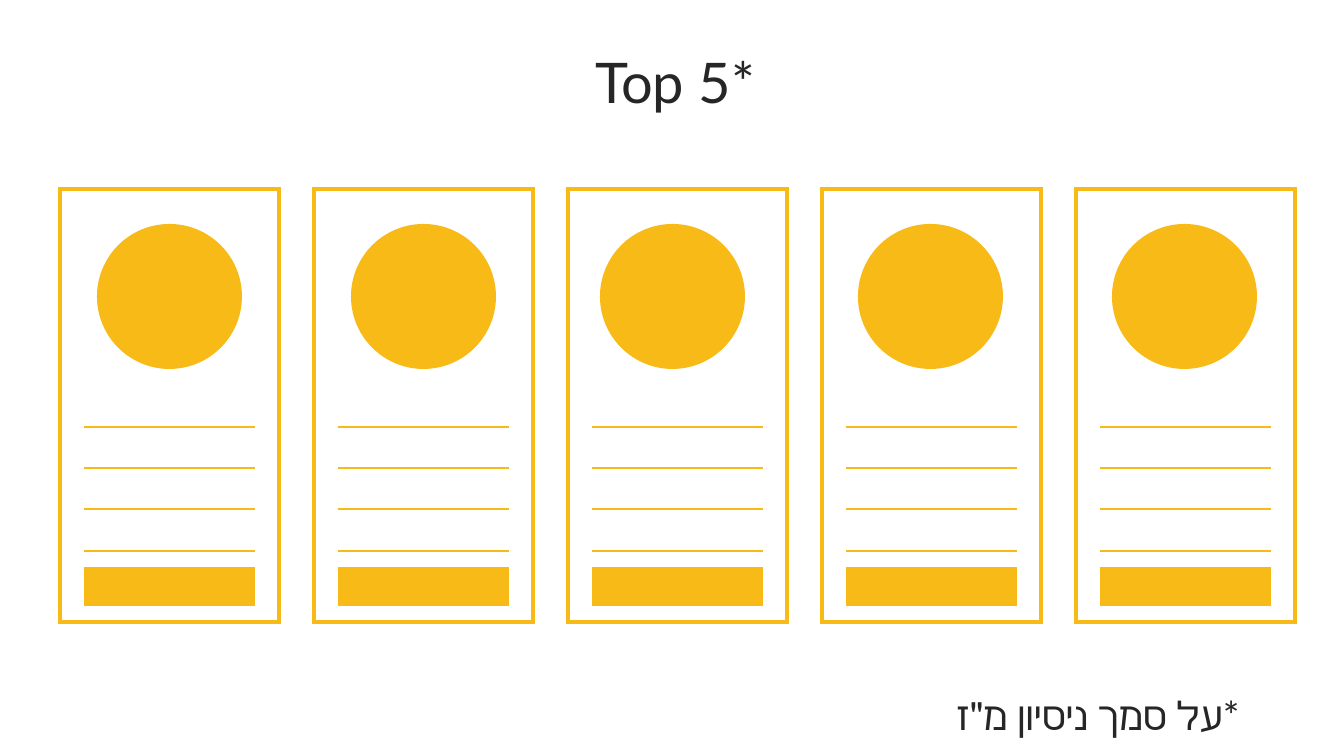
from dataclasses import dataclass

from lxml.etree import SubElement
from pptx import Presentation
from pptx.dml.color import RGBColor
from pptx.enum.lang import MSO_LANGUAGE_ID
from pptx.enum.shapes import MSO_SHAPE
from pptx.enum.text import MSO_ANCHOR, PP_ALIGN
from pptx.oxml.ns import qn
from pptx.slide import Slide
from pptx.table import _Cell
from pptx.util import Emu, Pt

AMBER = RGBColor(0xF8, 0xBA, 0x16)
INK = RGBColor(0x26, 0x26, 0x26)
FONT = "Lato"

COLUMNS = (24, 171, 24)
ROWS = (197, 41, 41, 41, 42, 16, 39, 16)
CARD_TOP = 189
CARD_LEFT = 60
CARD_PITCH = 254
CIRCLE_TOP = 224
CIRCLE_SIZE = 145
FRAME_PT = 3
RULE_PT = 1.5
BUTTON_ROW = 6


@dataclass(frozen=True)
class Card:
    left: int
    circle_inset: int


@dataclass(frozen=True)
class Label:
    text: str
    left: int
    top: int
    width: int
    height: int
    size: int
    language: MSO_LANGUAGE_ID


CARDS = [Card(CARD_LEFT + i * CARD_PITCH, inset)
         for i, inset in enumerate((37, 37, 32, 36, 36))]
LABELS = [
    Label("Top 5*", 456, 45, 438, 80, 40, MSO_LANGUAGE_ID.ENGLISH_US),
    Label('על סמך ניסיון מ"ז*', 852, 678, 492, 80, 28, MSO_LANGUAGE_ID.HEBREW),
]


def px(n: int) -> Emu:
    return Emu(round(n * 914400 / 100.8))


def set_border(cell: _Cell, side: str, width: float) -> None:
    tc_pr = cell._tc.get_or_add_tcPr()
    ln = SubElement(tc_pr, qn(f"a:ln{side}"), w=str(int(Pt(width))))
    if width:
        fill = SubElement(ln, qn("a:solidFill"))
        SubElement(fill, qn("a:srgbClr"), val=str(AMBER))
    else:
        SubElement(ln, qn("a:noFill"))


def style_cell(cell: _Cell, row: int, col: int) -> None:
    middle = col == 1
    last_row = len(ROWS) - 1
    at_right = col + cell.span_width == len(COLUMNS)
    top = FRAME_PT if row == 0 else RULE_PT if middle and 2 <= row <= 5 else 0
    bottom = FRAME_PT if row == last_row else RULE_PT if middle and 1 <= row <= 4 else 0
    set_border(cell, "L", FRAME_PT if col == 0 else 0)
    set_border(cell, "R", FRAME_PT if at_right else 0)
    set_border(cell, "T", top)
    set_border(cell, "B", bottom)
    if middle and row == BUTTON_ROW:
        cell.fill.solid()
        cell.fill.fore_color.rgb = AMBER
    else:
        cell.fill.background()


def add_card(s: Slide, card: Card) -> None:
    frame = s.shapes.add_table(len(ROWS), len(COLUMNS), px(card.left), px(CARD_TOP),
                               px(sum(COLUMNS)), px(sum(ROWS)))
    table = frame.table
    table.first_row = table.horz_banding = False
    for column, width in zip(table.columns, COLUMNS):
        column.width = px(width)
    for row, height in zip(table.rows, ROWS):
        row.height = px(height)
    table.cell(0, 0).merge(table.cell(0, 2))
    for col in (0, 2):
        table.cell(2, col).merge(table.cell(4, col))
    for row in range(len(ROWS)):
        for col in range(len(COLUMNS)):
            cell = table.cell(row, col)
            cell.margin_left = cell.margin_right = 0
            cell.margin_top = cell.margin_bottom = 0
            p = cell.text_frame.paragraphs[0]
            SubElement(p._p, qn("a:endParaRPr"), sz="600")
            if not cell.is_spanned:
                style_cell(cell, row, col)


def add_circle(s: Slide, card: Card) -> None:
    sp = s.shapes.add_shape(MSO_SHAPE.OVAL, px(card.left + card.circle_inset),
                            px(CIRCLE_TOP), px(CIRCLE_SIZE), px(CIRCLE_SIZE))
    sp.shadow.inherit = False
    sp.fill.solid()
    sp.fill.fore_color.rgb = AMBER
    sp.line.fill.background()


def add_label(s: Slide, label: Label) -> None:
    sp = s.shapes.add_textbox(px(label.left), px(label.top),
                              px(label.width), px(label.height))
    tf = sp.text_frame
    tf.word_wrap = True
    tf.vertical_anchor = MSO_ANCHOR.MIDDLE
    tf.text = label.text
    p = tf.paragraphs[0]
    p.alignment = PP_ALIGN.CENTER
    p.line_spacing = 0.9
    r = p.runs[0]
    r.font.size = Pt(label.size)
    r.font.name = FONT
    r.font.language_id = label.language
    r.font.color.rgb = INK


def main() -> None:
    prs = Presentation()
    prs.slide_width, prs.slide_height = px(1344), px(756)
    s = prs.slides.add_slide(prs.slide_layouts[6])
    for card in CARDS:
        add_card(s, card)
        add_circle(s, card)
    for label in LABELS:
        add_label(s, label)
    prs.save("out.pptx")


if __name__ == "__main__":
    main()
